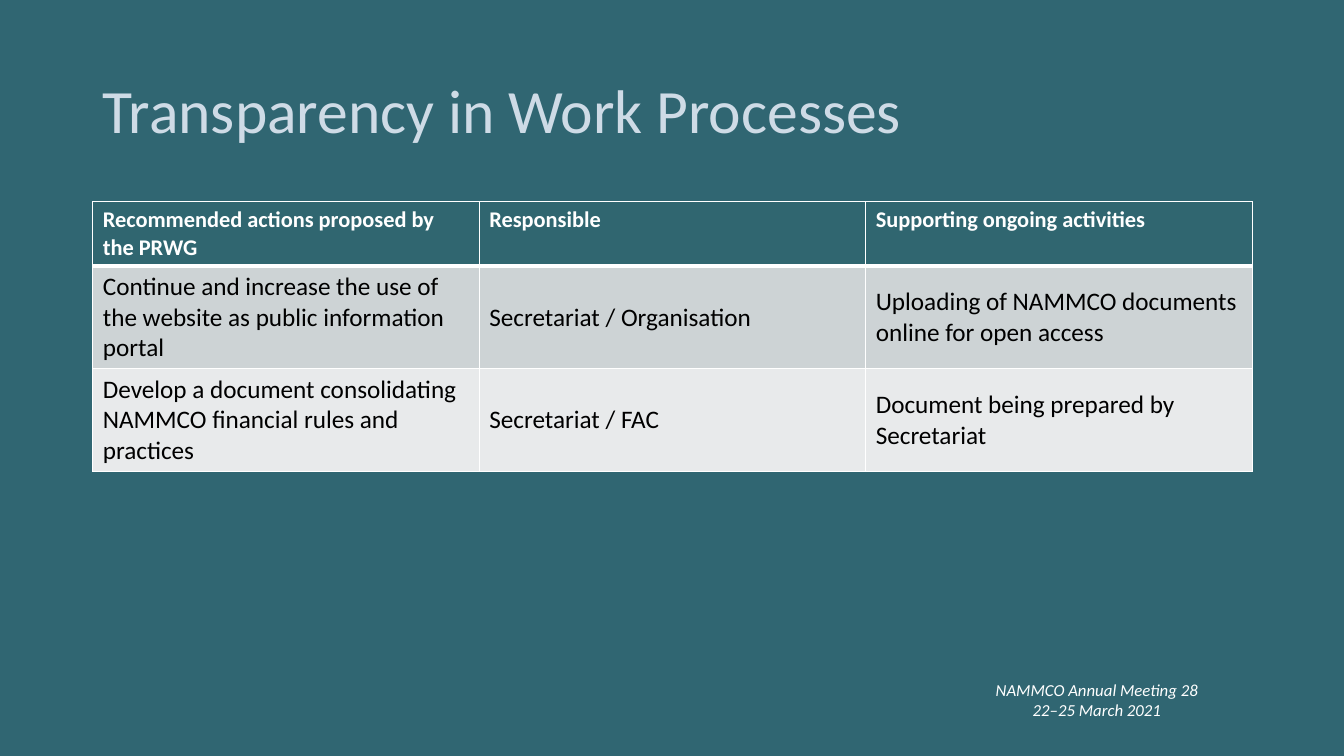
from lxml.etree import SubElement
from pptx import Presentation
from pptx.dml.color import RGBColor
from pptx.enum.text import MSO_ANCHOR, PP_ALIGN
from pptx.oxml.ns import qn
from pptx.util import Inches, Pt

TITLE = "Transparency in Work Processes"
MEETING = ["NAMMCO Annual Meeting 28", "22–25 March 2021"]
HEADER = ["Recommended actions proposed by the PRWG", "Responsible",
          "Supporting ongoing activities"]
ACTIONS = [
    ["Continue and increase the use of the website as public information portal",
     "Secretariat / Organisation",
     "Uploading of NAMMCO documents online for open access"],
    ["Develop a document consolidating NAMMCO financial rules and practices",
     "Secretariat / FAC",
     "Document being prepared by Secretariat"],
]

FONT = "Calibri"
BACKGROUND, HEADER_FILL = "306672", "306670"
BAND_FILLS = ["CDD3D5", "E8EAEB"]
WHITE, BLACK, TITLE_COLOR = "FFFFFF", "000000", "CEDBE6"
LEFT, CONTENT_WIDTH = 0.92, 11.5
HEADER_HEIGHT, ACTION_HEIGHT = 0.64, 1.02
THIN, THICK = 1, 3


def paint(fill, color):
    fill.solid()
    fill.fore_color.rgb = RGBColor.from_string(color)


def add_run(paragraph, text, size, color, bold=False, italic=False):
    run = paragraph.add_run()
    run.text = text
    font = run.font
    font.name, font.size, font.bold, font.italic = FONT, Pt(size), bold, italic
    font.color.rgb = RGBColor.from_string(color)


def add_text(slide, box, lines, size, color, align=PP_ALIGN.LEFT, spacing=1.0,
             italic=False):
    frame = slide.shapes.add_textbox(*map(Inches, box)).text_frame
    frame.word_wrap = True
    frame.vertical_anchor = MSO_ANCHOR.MIDDLE
    for index, line in enumerate(lines):
        paragraph = frame.add_paragraph() if index else frame.paragraphs[0]
        paragraph.alignment = align
        paragraph.line_spacing = spacing
        add_run(paragraph, line, size, color, italic=italic)


def add_borders(cell, top, bottom):
    """Draw white cell borders; call before filling, as the schema wants lines first."""
    properties = cell._tc.get_or_add_tcPr()
    for side, width in (("L", THIN), ("R", THIN), ("T", top), ("B", bottom)):
        line = SubElement(properties, qn(f"a:ln{side}"), w=str(Pt(width)))
        SubElement(SubElement(line, qn("a:solidFill")), qn("a:srgbClr"), val=WHITE)


def add_actions_table(slide):
    rows = [HEADER] + ACTIONS
    heights = [HEADER_HEIGHT] + [ACTION_HEIGHT] * len(ACTIONS)
    box = (LEFT, 2, CONTENT_WIDTH, sum(heights))
    table = slide.shapes.add_table(len(rows), len(HEADER), *map(Inches, box)).table
    for column in table.columns:
        column.width = Inches(CONTENT_WIDTH / len(HEADER))
    for r, (texts, height) in enumerate(zip(rows, heights)):
        table.rows[r].height = Inches(height)
        is_header = r == 0
        for c, text in enumerate(texts):
            cell = table.cell(r, c)
            add_borders(cell, THICK if r == 1 else THIN, THICK if is_header else THIN)
            paragraph = cell.text_frame.paragraphs[0]
            if is_header:
                paint(cell.fill, HEADER_FILL)
                add_run(paragraph, text, 16, WHITE, bold=True)
            else:
                paint(cell.fill, BAND_FILLS[(r - 1) % 2])
                cell.vertical_anchor = MSO_ANCHOR.MIDDLE
                add_run(paragraph, text, 18, BLACK)


def main():
    deck = Presentation()
    deck.slide_width, deck.slide_height = Inches(13.33), Inches(7.5)
    slide = deck.slides.add_slide(deck.slide_layouts[6])
    paint(slide.background.fill, BACKGROUND)
    add_text(slide, (9.73, 6.74, 2.3, 0.4), MEETING, 12, WHITE,
             align=PP_ALIGN.CENTER, italic=True)
    add_text(slide, (LEFT, 0.4, CONTENT_WIDTH, 1.45), [TITLE], 44, TITLE_COLOR,
             spacing=0.9)
    add_actions_table(slide)
    deck.save("out.pptx")


if __name__ == "__main__":
    main()
